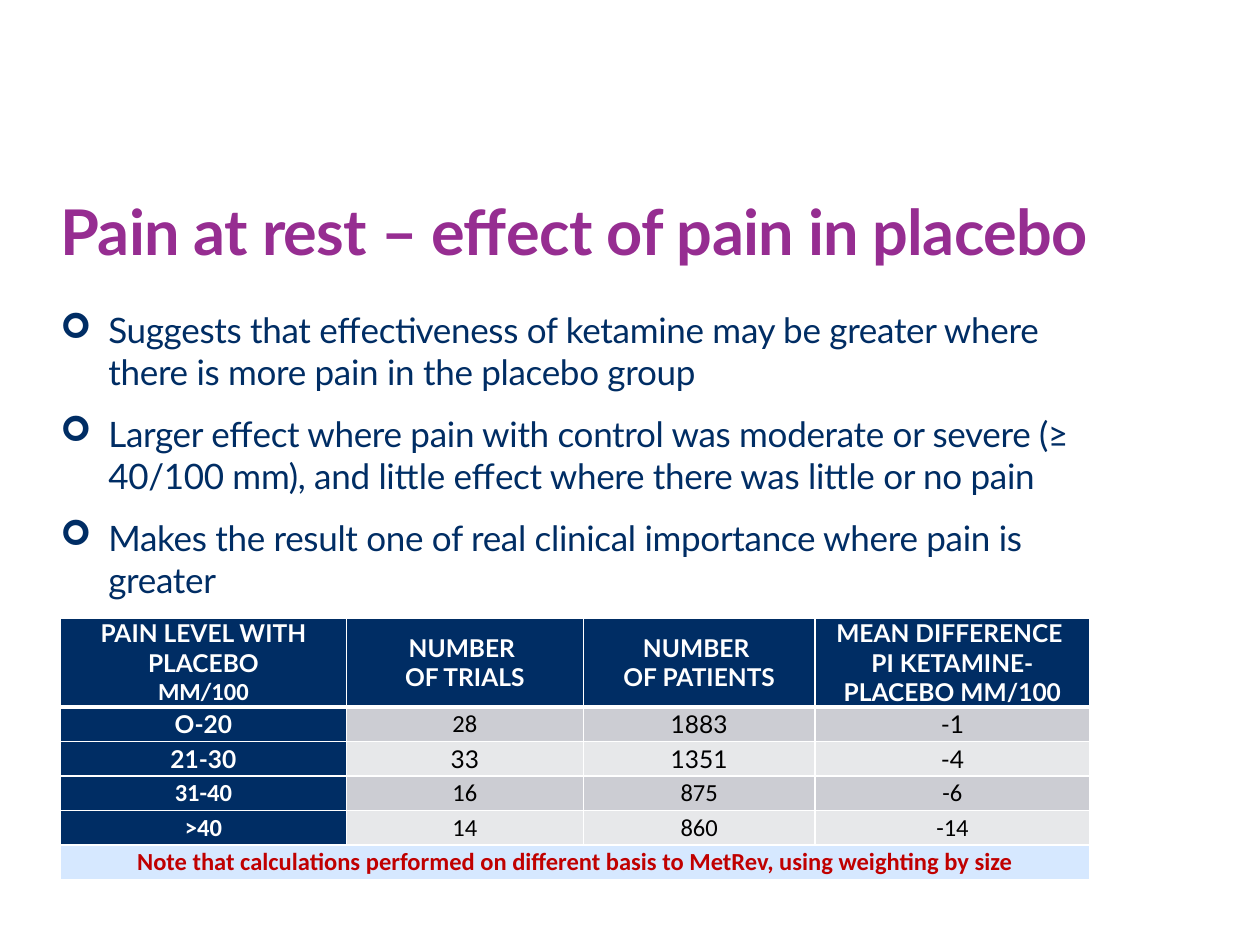
from lxml import etree
from pptx import Presentation
from pptx.dml.color import RGBColor
from pptx.enum.text import MSO_ANCHOR, PP_ALIGN
from pptx.oxml.ns import qn
from pptx.util import Inches, Pt

MIDDLE, BOTTOM, TOP = MSO_ANCHOR.MIDDLE, MSO_ANCHOR.BOTTOM, MSO_ANCHOR.TOP
CENTER = PP_ALIGN.CENTER

PURPLE = RGBColor(0x96, 0x2D, 0x91)
NAVY = RGBColor(0x00, 0x2D, 0x64)
WHITE = RGBColor(0xFF, 0xFF, 0xFF)
BLACK = RGBColor(0x00, 0x00, 0x00)
DARK_BAND = RGBColor(0xCC, 0xCD, 0xD3)
LIGHT_BAND = RGBColor(0xE7, 0xE8, 0xEA)
PALE_BLUE = RGBColor(0xD6, 0xE8, 0xFF)
RED = RGBColor(0xC0, 0x00, 0x00)

LATO, CALIBRI = "Lato", "Calibri"

TITLE = "Pain at rest – effect of pain in placebo"
FINDINGS = [
    "Suggests that effectiveness of ketamine may be greater where there is more pain "
    "in the placebo group",
    "Larger effect where pain with control was moderate or severe (≥ 40/100 mm), "
    "and little effect where there was little or no pain",
    "Makes the result one of real clinical importance where pain is greater",
]
COLUMN_WIDTHS = [2.27, 1.88, 1.84, 2.18]
HEADER_HEIGHT = Inches(0.7)
# Each cell is a list of (text, font) lines.
HEADERS = [
    [("PAIN LEVEL WITH PLACEBO", LATO), ("MM/100", CALIBRI)],
    [("NUMBER ", LATO), ("OF TRIALS", LATO)],
    [("NUMBER ", LATO), ("OF PATIENTS", LATO)],
    [("MEAN DIFFERENCE ", LATO), ("PI KETAMINE-PLACEBO MM/100", LATO)],
]
PAIN_LEVELS = [
    [("O-20", LATO), ("28", CALIBRI), ("1883", LATO), ("-1", LATO)],
    [("21-30", LATO), ("33", LATO), ("1351", LATO), ("-4", LATO)],
    [("31-40", CALIBRI), ("16", CALIBRI), ("875", CALIBRI), ("-6", CALIBRI)],
    [(">40", CALIBRI), ("14", CALIBRI), ("860", CALIBRI), ("-14", CALIBRI)],
]
NOTE = "Note that calculations performed on different basis to MetRev, using weighting by size"


def add_run(paragraph, text, font, size, color, bold=False, spacing=0):
    """Add a run; spacing is the letter spacing in points."""
    run = paragraph.add_run()
    run.text = text
    run.font.name = font
    run.font.size = Pt(size)
    run.font.bold = bold
    run.font.color.rgb = color
    if spacing:
        run.font._element.set("spc", str(round(spacing * 100)))


def add_text_frame(slide, box, anchor):
    frame = slide.shapes.add_textbox(*box).text_frame
    frame.word_wrap = True
    frame.vertical_anchor = anchor
    frame.margin_left = frame.margin_right = frame.margin_top = frame.margin_bottom = 0
    return frame


def add_title(slide, box):
    frame = add_text_frame(slide, box, BOTTOM)
    add_run(frame.paragraphs[0], TITLE, LATO, 36, PURPLE, bold=True, spacing=-0.4)


def add_findings(slide, box):
    frame = add_text_frame(slide, box, TOP)
    indent = Inches(0.38)
    for index, finding in enumerate(FINDINGS):
        paragraph = frame.add_paragraph() if index else frame.paragraphs[0]
        properties = paragraph._p.get_or_add_pPr()
        properties.set("marL", str(indent))
        properties.set("indent", str(-indent))
        etree.SubElement(properties, qn("a:buFont"), typeface="Wingdings")
        etree.SubElement(properties, qn("a:buChar"), char="➢")
        if index:
            paragraph.space_before = Pt(11.3)
        add_run(paragraph, finding, LATO, 20, NAVY, spacing=-0.2)


def set_borders(cell, top=1, bottom=1):
    """Draw white borders; top and bottom are widths in points."""
    properties = cell._tc.get_or_add_tcPr()
    for tag, width in (("a:lnL", 1), ("a:lnR", 1), ("a:lnT", top), ("a:lnB", bottom)):
        line = etree.SubElement(properties, qn(tag), w=str(Pt(width)))
        fill = etree.SubElement(line, qn("a:solidFill"))
        etree.SubElement(fill, qn("a:srgbClr"), val=str(WHITE))


def fill_cell(cell, lines, background, color, bold, top=1, bottom=1):
    set_borders(cell, top, bottom)
    cell.fill.solid()
    cell.fill.fore_color.rgb = background
    cell.vertical_anchor = MIDDLE
    cell.margin_left = cell.margin_right = Inches(0.07)
    cell.margin_top = cell.margin_bottom = 0
    for index, (text, font) in enumerate(lines):
        frame = cell.text_frame
        paragraph = frame.add_paragraph() if index else frame.paragraphs[0]
        paragraph.alignment = CENTER
        add_run(paragraph, text, font, 14, color, bold)


def add_pain_table(slide, box):
    row_count = len(PAIN_LEVELS) + 2
    table = slide.shapes.add_table(row_count, len(HEADERS), *box).table
    for column, width in zip(table.columns, COLUMN_WIDTHS):
        column.width = Inches(width)
    body_height = (box[3] - HEADER_HEIGHT) // (row_count - 1)
    for index, row in enumerate(table.rows):
        row.height = body_height if index else HEADER_HEIGHT

    for column, lines in enumerate(HEADERS):
        fill_cell(table.cell(0, column), lines, NAVY, WHITE, True, bottom=3)
    for row, values in enumerate(PAIN_LEVELS, start=1):
        band = DARK_BAND if row % 2 else LIGHT_BAND
        top = 3 if row == 1 else 1
        for column, value in enumerate(values):
            is_label = column == 0
            fill_cell(table.cell(row, column), [value], NAVY if is_label else band,
                      WHITE if is_label else BLACK, is_label, top=top)

    note_cell = table.cell(row_count - 1, 0)
    note_cell.merge(table.cell(row_count - 1, len(HEADERS) - 1))
    fill_cell(note_cell, [(NOTE, CALIBRI)], PALE_BLUE, RED, True)


def main():
    presentation = Presentation()
    presentation.slide_width = Inches(10)
    presentation.slide_height = Inches(7.5)
    slide = presentation.slides.add_slide(presentation.slide_layouts[6])
    left = Inches(0.48)
    add_title(slide, (left, Inches(1.44), Inches(8.38), Inches(0.69)))
    add_findings(slide, (left, Inches(2.45), Inches(8.18), Inches(2.27)))
    add_pain_table(slide, (left, Inches(4.91), Inches(8.17), Inches(2.07)))
    presentation.save("out.pptx")


if __name__ == "__main__":
    main()
